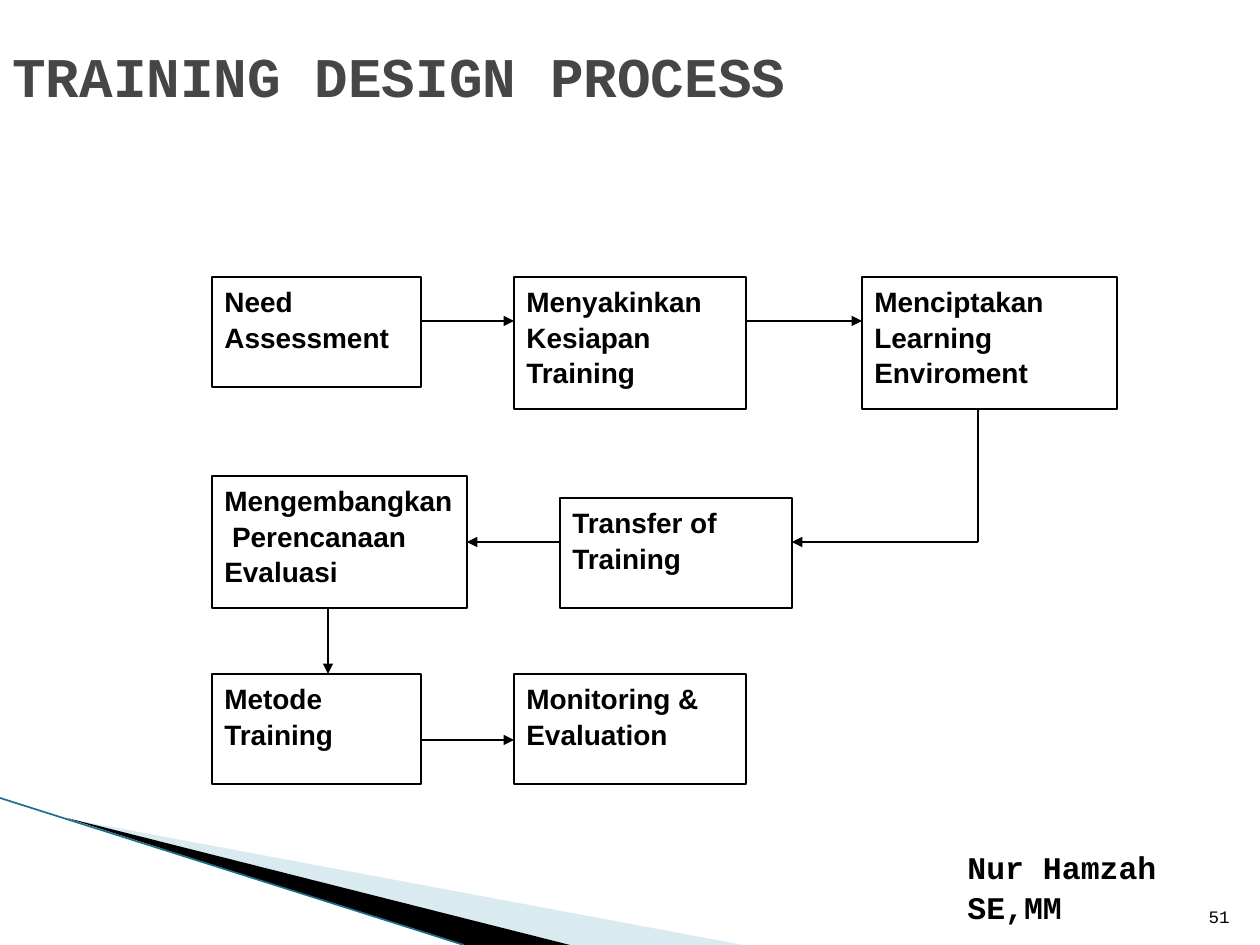
from lxml import etree
from pptx import Presentation
from pptx.dml.color import RGBColor
from pptx.enum import shapes, text
from pptx.oxml.ns import qn
from pptx.util import Pt

SCALE = 914400 / 126  # EMU per px
HEX = {"ink": "000000", "title": "464646", "paper": "FFFFFF",
       "pale": "A0CBDC", "teal": "1B6F87"}
MONO, SANS = "Courier New", "Arial"


def px(n):
    return round(n * SCALE)


def rgb(name):
    return RGBColor.from_string(HEX[name])


def write(shape, words, size=16, font=SANS, color="ink", bold=True,
          align="LEFT", anchor="TOP", space=1.05):
    frame = shape.text_frame
    frame.word_wrap = True
    frame.vertical_anchor = getattr(text.MSO_ANCHOR, anchor)
    para = frame.paragraphs[0]
    para.alignment = getattr(text.PP_ALIGN, align)
    para.line_spacing = space
    run = para.add_run()
    run.text = words
    run.font.size, run.font.name, run.font.bold = Pt(size), font, bold
    run.font.color.rgb = rgb(color)


def label(slide, area, words, **style):
    write(slide.shapes.add_textbox(*map(px, area)), words, **style)


def box(slide, area, words):
    shape = slide.shapes.add_shape(shapes.MSO_SHAPE.RECTANGLE, *map(px, area))
    shape.shadow.inherit = False
    shape.fill.solid()
    shape.fill.fore_color.rgb = rgb("paper")
    shape.line.color.rgb = rgb("ink")
    shape.line.width = Pt(0.75)
    write(shape, words)
    return shape


def link(slide, start, end, color="ink", width=0.75, head=True):
    line = slide.shapes.add_connector(
        shapes.MSO_CONNECTOR.STRAIGHT, *map(px, start + end))
    line.line.color.rgb = rgb(color)
    line.line.width = Pt(width)
    if head:
        etree.SubElement(line.line._get_or_add_ln(), qn("a:tailEnd"),
                         type="triangle")
    etree.SubElement(line._element.spPr, qn("a:effectLst"))
    return line


def wedge(slide, points, color, alpha=100):
    pen = slide.shapes.build_freeform(*points[0], scale=SCALE)
    pen.add_line_segments(points[1:], close=True)
    shape = pen.convert_to_shape()
    shape.shadow.inherit = False
    shape.fill.solid()
    shape.fill.fore_color.rgb = rgb(color)
    shape.line.fill.background()
    if alpha < 100:
        tint = shape._element.spPr.find(".//" + qn("a:srgbClr"))
        etree.SubElement(tint, qn("a:alpha"), val=str(alpha * 1000))


def main():
    deck = Presentation()
    deck.slide_width, deck.slide_height = px(1260), px(945)
    slide = deck.slides.add_slide(deck.slide_layouts[6])

    # Corner decoration
    wedge(slide, [(69, 819), (743, 945), (570, 945)], "pale", alpha=40)
    wedge(slide, [(67, 818), (570, 945), (462, 945)], "ink")
    link(slide, (0, 798), (464, 945), color="teal", width=0.95, head=False)

    # Title and page number
    label(slide, (0, 14, 1137, 122), "TRAINING DESIGN PROCESS", size=32,
          font=MONO, color="title", anchor="MIDDLE", space=1)
    label(slide, (1192, 883, 50, 50), "51", size=10, font=MONO, bold=False,
          align="RIGHT", anchor="BOTTOM", space=1)

    # Process steps: three columns, three rows
    left, mid, right = 212, 514, 862
    top, low = 277, 674
    small, wide, broad = 209, 232, 255
    short, tall = 110, 132
    box(slide, (left, top, small, short), "Need Assessment")
    box(slide, (mid, top, wide, tall), "Menyakinkan Kesiapan Training")
    box(slide, (right, top, broad, tall), "Menciptakan Learning Enviroment")
    box(slide, (560, 498, wide, short), "Transfer of Training")
    plan = box(slide, (left, 476, broad, tall),
               "Mengembangkan  Perencanaan Evaluasi")
    box(slide, (left, low, small, short), "Metode Training")
    box(slide, (mid, low, wide, short), "Monitoring & Evaluation")

    # Flow between the steps
    link(slide, (left + small, 321), (mid, 321))
    link(slide, (mid + wide, 321), (right, 321))
    link(slide, (978, top + tall), (978, 542), head=False)
    link(slide, (978, 542), (560 + wide, 542))
    link(slide, (560, 542), (left + broad, 542)).end_connect(plan, 3)
    link(slide, (328, 476 + tall), (328, low))
    link(slide, (left + small, 740), (mid, 740))

    # Author
    label(slide, (955, 840, 290, 90), "Nur Hamzah SE,MM", size=18, font=MONO)

    deck.save("out.pptx")


if __name__ == "__main__":
    main()
